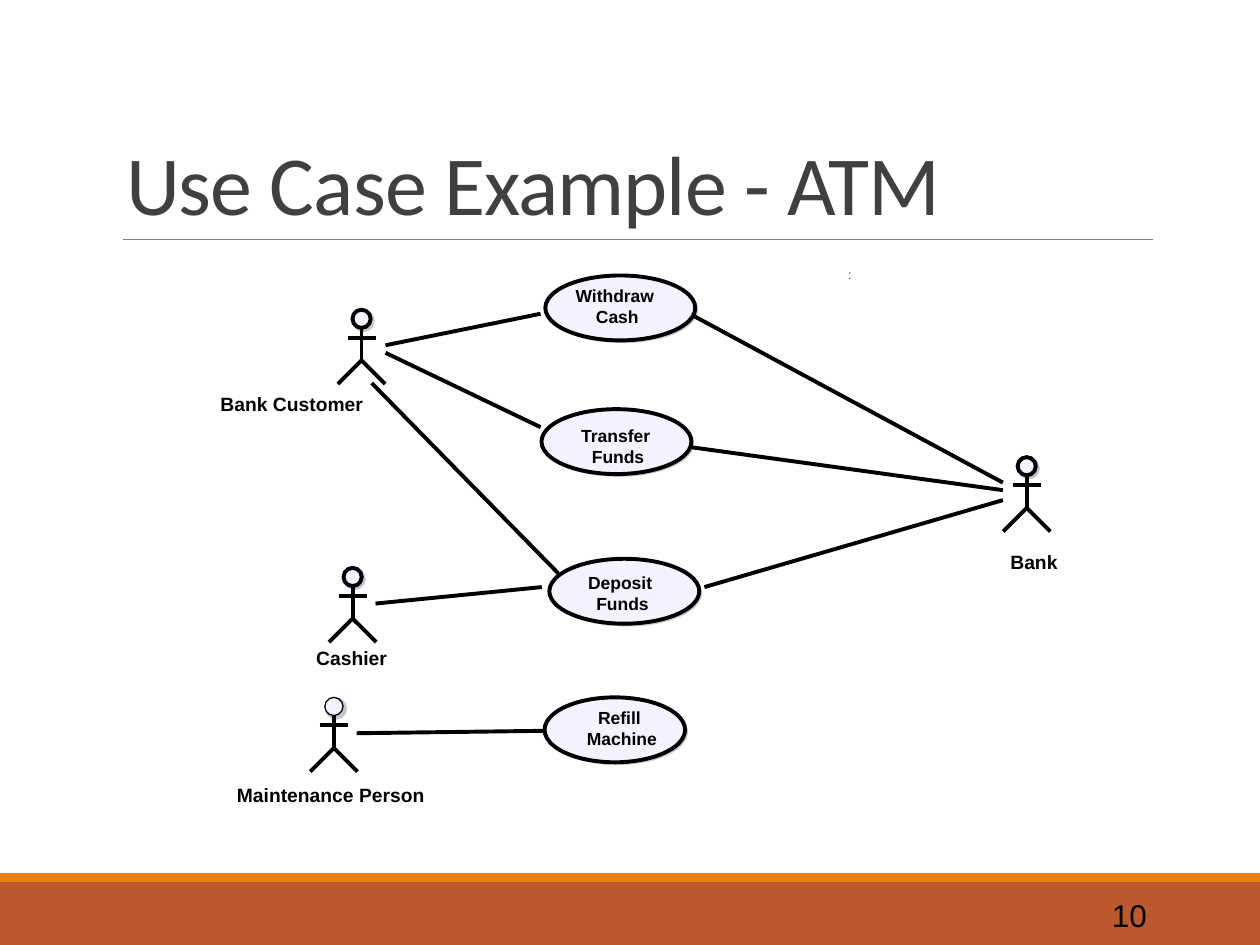
"""Build a slide with the use case diagram of a cash machine."""
from lxml.etree import SubElement
from pptx import Presentation
from pptx.dml.color import RGBColor
from pptx.enum.shapes import MSO_CONNECTOR as Connector, MSO_SHAPE as Shape
from pptx.enum.text import MSO_ANCHOR as Anchor, MSO_AUTO_SIZE as AutoSize, PP_ALIGN as Align
from pptx.oxml.ns import qn
from pptx.util import Pt

BLACK, LILAC, GREY = "000000", "F3F2FF", "C8C8C8"
STROKE = 2.25

ACTORS = [
    ("Bank Customer", 206.6, 177, STROKE, (126, 223.9, 89.3)),
    ("Bank", 586.7, 261.2, STROKE, (577.4, 314.6, 28.8)),
    ("Maintenance Person", 190.8, 398.5, 0, (135.4, 447.8, 113)),
    ("Cashier", 201.5, 324.5, STROKE, (180.7, 369.4, 42.5)),
]
USE_CASES = [
    (("Withdraw", " Cash"), (311.6, 157.4, 85.7), (327.6, 162.7, 47.5)),
    (("Deposit ", "Funds"), (313.9, 319.3, 85.7), (334.8, 326.9, 41.8)),
    (("Transfer ", "Funds"), (309.4, 233.8, 85.7), (330.5, 242.6, 45.4)),
    (("Refill ", "Machine"), (311.2, 398.5, 80.3), (334.1, 403.9, 42.5)),
]
ASSOCIATIONS = [
    (220.3, 197.3, 308.9, 179.3),
    (212.4, 218.9, 319, 327.6),
    (220.3, 201.6, 308.9, 244.1),
    (573.1, 275.8, 396.7, 180.7),
    (573.1, 285.8, 402.5, 335.5),
    (573.1, 280.1, 395.3, 255.6),
    (203.8, 419, 311.8, 417.6),
    (214.6, 344.9, 309.6, 335.5),
]


def color(value):
    """Turn a hex string into a colour."""
    return RGBColor.from_string(value)


def apply(target, values):
    """Set every attribute in a dict of format values."""
    for name, value in values.items():
        setattr(target, name, value)


class Diagram:
    """Hold the style and the current slide."""

    def __init__(self, slide):
        """Keep the slide and its shape collection."""
        self.slide = slide
        self.shapes = slide.shapes

    def fill_text(self, frame, lines, size, text_color=BLACK, font="Arial", bold=False, align=Align.LEFT):
        """Fill a text frame with one paragraph for each line."""
        for index, line in enumerate(lines):
            paragraph = frame.add_paragraph() if index else frame.paragraphs[0]
            paragraph.alignment = align
            run = paragraph.add_run()
            run.text = line
            apply(run.font, {"name": font, "size": Pt(size), "bold": bold})
            run.font.color.rgb = color(text_color)

    def title(self, text, box):
        """Place and format the title."""
        title = self.shapes.title
        apply(title, dict(zip(("left", "top", "width", "height"), map(Pt, box))))
        frame = title.text_frame
        apply(frame, {"vertical_anchor": Anchor.BOTTOM, "auto_size": AutoSize.NONE, "word_wrap": True})
        self.fill_text(frame, [text], 48, "404040", "Calibri")
        paragraph = frame.paragraphs[0]
        paragraph.line_spacing = 0.85
        paragraph.runs[0].font._element.set("spc", "-50")

    def page_number(self, text, box):
        """Add the page number."""
        frame = self.shapes.add_textbox(*map(Pt, box)).text_frame
        apply(frame, {"vertical_anchor": Anchor.MIDDLE, "word_wrap": True})
        self.fill_text(frame, [text], 18, align=Align.RIGHT)

    def label(self, lines, box, size, **style):
        """Add an unwrapped text box without margins."""
        frame = self.shapes.add_textbox(*map(Pt, box)).text_frame
        margins = {f"margin_{side}": 0 for side in ("left", "top", "right", "bottom")}
        apply(frame, {**margins, "word_wrap": False, "auto_size": AutoSize.SHAPE_TO_FIT_TEXT})
        self.fill_text(frame, lines, size, **style)

    def block(self, kind, box, fill, line=None, width=0):
        """Add a filled preset shape."""
        shape = self.shapes.add_shape(kind, *map(Pt, box))
        shape.shadow.inherit = False
        shape.fill.solid()
        shape.fill.fore_color.rgb = color(fill)
        if line:
            shape.line.color.rgb = color(line)
            shape.line.width = Pt(width)
        else:
            shape.line.fill.background()

    def line(self, points, line_color=BLACK, width=STROKE):
        """Add a straight connector."""
        connector = self.shapes.add_connector(Connector.STRAIGHT, *map(Pt, points))
        connector.line.color.rgb = color(line_color)
        connector.line.width = Pt(width)
        SubElement(connector._element.spPr, qn("a:effectLst"))

    def shadowed_oval(self, left, top, width, height, stroke, shadow_stroke):
        """Add an oval above its grey shadow."""
        self.block(Shape.OVAL, (left + 1.2, top + 1.2, width, height), GREY, GREY, shadow_stroke)
        self.block(Shape.OVAL, (left, top, width, height), LILAC, BLACK, stroke)

    def actor(self, name, x, top, stroke, label_box):
        """Add a stick figure with its name."""
        head, arm, hip, foot = 10.4, 16, 29, 42.5
        self.shadowed_oval(x - head / 2, top, head, head, stroke, STROKE)
        self.line((x, top + head, x, top + hip))
        self.line((x - 8, top + arm, x + 8, top + arm))
        builder = self.shapes.build_freeform(Pt(x - 13.5), Pt(top + foot))
        builder.add_line_segments(
            [(Pt(x), Pt(top + hip)), (Pt(x + 13.5), Pt(top + foot))], close=False)
        legs = builder.convert_to_shape()
        legs.shadow.inherit = False
        legs.fill.background()
        legs.line.color.rgb = color(BLACK)
        legs.line.width = Pt(STROKE)
        self.label([name], (*label_box, 13.7), 11, bold=True)

    def use_case(self, lines, oval, label_box):
        """Add a use case oval with its caption."""
        self.shadowed_oval(*oval, 37.1, STROKE, 0)
        self.label(lines, (*label_box, 25.2), 10, bold=True, align=Align.CENTER)


def main():
    """Build and save the presentation."""
    presentation = Presentation()
    apply(presentation, {"slide_width": Pt(720), "slide_height": Pt(540)})
    diagram = Diagram(presentation.slides.add_slide(presentation.slide_layouts[5]))
    diagram.block(Shape.RECTANGLE, (0, 504, 720, 36), "BD582C")
    diagram.block(Shape.RECTANGLE, (0, 499, 720, 5), "E48312")
    diagram.line((70.5, 136.8, 658.8, 136.8), "808080", 0.5)
    diagram.title("Use Case Example - ATM", (64.8, 22.3, 594, 114.5))
    diagram.page_number("10", (584.6, 508.3, 77.8, 28.8))
    diagram.label([":"], (484.6, 152.6, 6.5, 10.8), 7, text_color="4020C0")
    for use_case in USE_CASES:
        diagram.use_case(*use_case)
    for actor in ACTORS:
        diagram.actor(*actor)
    for association in ASSOCIATIONS:
        diagram.line(association)
    presentation.save("out.pptx")


if __name__ == "__main__":
    main()
